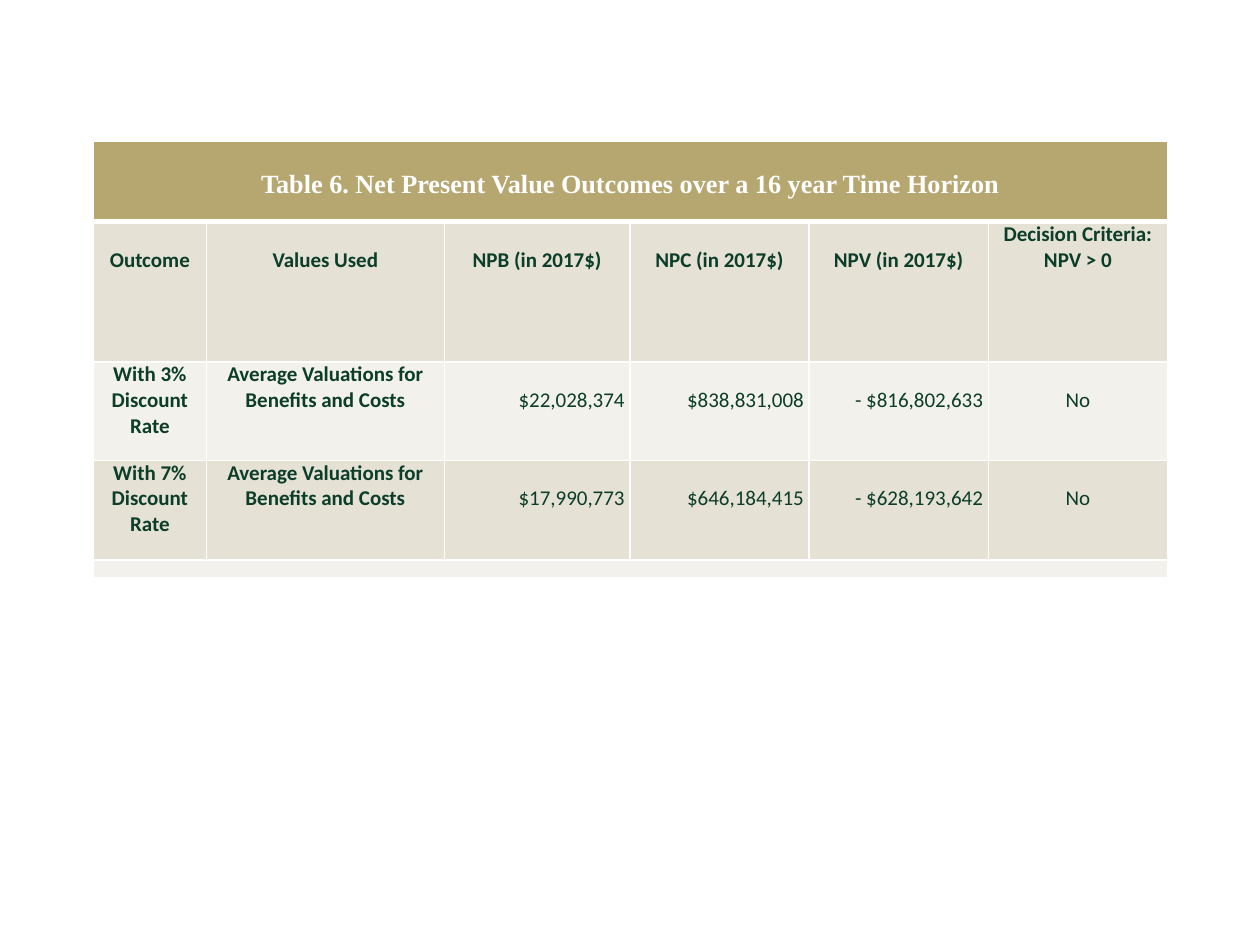
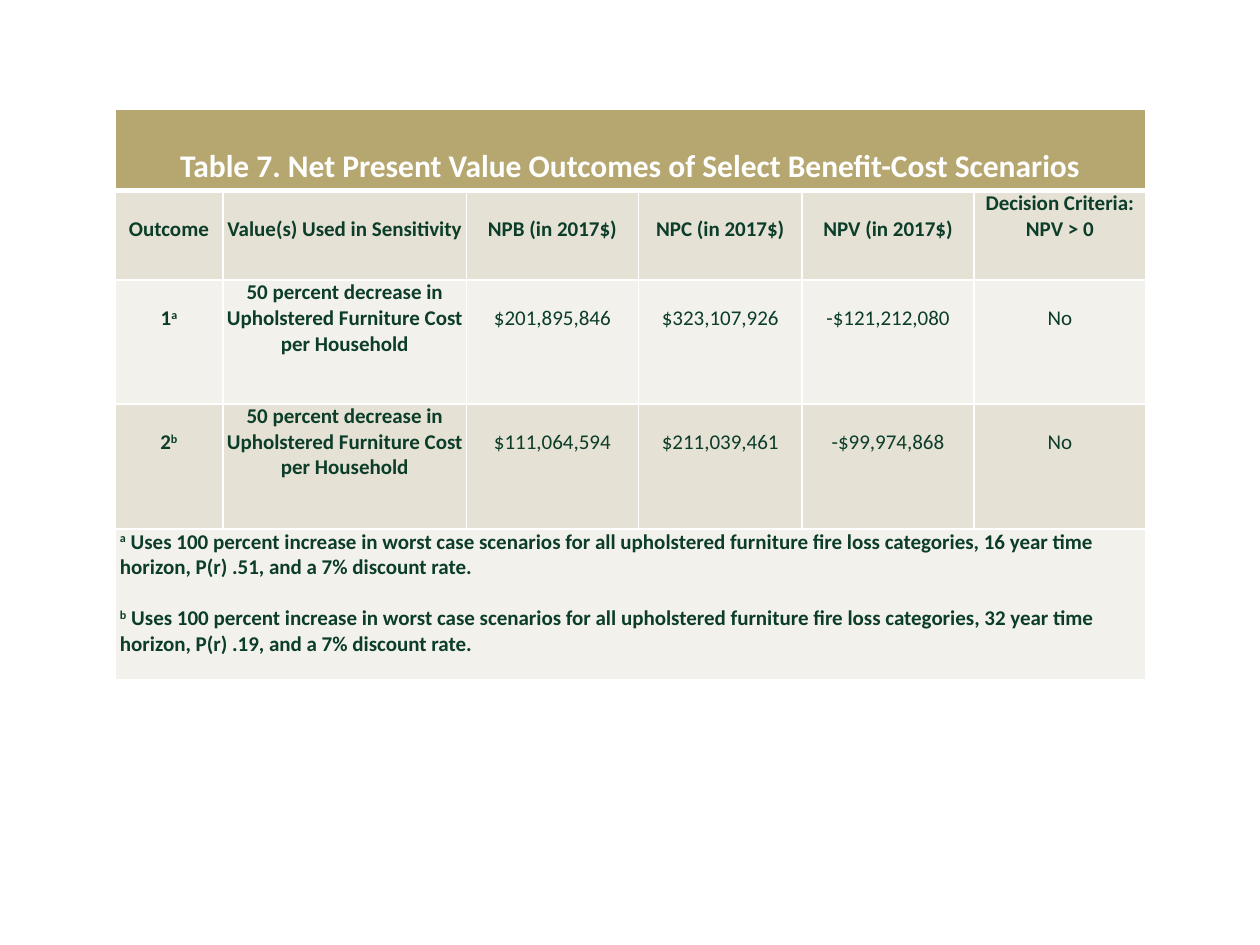
"""Build two slides with net present value tables."""
from lxml import etree
from pptx import Presentation
from pptx.dml.color import RGBColor
from pptx.enum.text import PP_ALIGN
from pptx.oxml.ns import qn
from pptx.util import Pt

LEFT, MID, RIGHT = PP_ALIGN.LEFT, PP_ALIGN.CENTER, PP_ALIGN.RIGHT
GOLD = RGBColor(0xB6, 0xA7, 0x71)
SAND = RGBColor(0xE5, 0xE1, 0xD5)
PALE = RGBColor(0xF3, 0xF1, 0xEB)
GREEN = RGBColor(0x0B, 0x3D, 0x29)
WHITE = RGBColor(0xFF, 0xFF, 0xFF)
BANDS = [GOLD, SAND, PALE, SAND, PALE]
SANS, SERIF = "Calibri", "Times New Roman"
MONEY = ["NPB (in 2017$)", "NPC (in 2017$)", "NPV (in 2017$)", "Decision Criteria: NPV > 0"]
MEAN = "Average Valuations for Benefits and Costs"
HALF = "50 percent decrease in Upholstered Furniture Cost per Household"
NOTE = ("^{}^ Uses 100 percent increase in worst case scenarios for all upholstered furniture "
        "fire loss categories, {} year time horizon, P(r) {}, and a 7% discount rate.")

TABLES = [
    dict(
        title="Table 6. Net Present Value Outcomes over a 16 year Time Horizon",
        face=SERIF, size=15, left=53.4, top=80.6, inset=3, align=RIGHT,
        cols=[64.5, 136.1, 106, 102.4, 102.4, 102.4],
        rows=[46, 80.3, 56.2, 57, 9.7],
        body=[
            ["Outcome", "Values Used", *MONEY],
            ["With 3% Discount Rate", MEAN, "$22,028,374", "$838,831,008", "- $816,802,633", "No"],
            ["With 7% Discount Rate", MEAN, "$17,990,773", "$646,184,415", "- $628,193,642", "No"],
        ],
        notes=[],
    ),
    dict(
        title="Table 7. Net Present Value Outcomes of Select Benefit-Cost Scenarios",
        face=SANS, size=18, left=65.6, top=62.2, inset=1.5, align=MID,
        cols=[61.9, 139.1, 98.2, 93.6, 98.2, 98.2],
        rows=[46.8, 51, 70.8, 71.6, 86],
        body=[
            ["Outcome", "Value(s) Used in Sensitivity", *MONEY],
            ["1^a", HALF, "$201,895,846", "$323,107,926", "-$121,212,080", "No"],
            ["2^b", HALF, "$111,064,594", "$211,039,461", "-$99,974,868", "No"],
        ],
        notes=[NOTE.format("a", 16, ".51"), NOTE.format("b", 32, ".19")],
    ),
]


def dress(cell, band, inset, row):
    """Set borders, fill and margins of a cell."""
    props = cell._tc.get_or_add_tcPr()
    for side in "LRTB":
        thick = (row, side) in ((0, "B"), (1, "T"))
        line = etree.SubElement(props, qn("a:ln" + side), w=str(Pt(3 if thick else 1)))
        fill = etree.SubElement(line, qn("a:solidFill"))
        etree.SubElement(fill, qn("a:srgbClr"), val=str(WHITE))
    cell.fill.solid()
    cell.fill.fore_color.rgb = band
    cell.margin_left = cell.margin_right = Pt(inset)
    cell.margin_top = cell.margin_bottom = 0


def write(para, text, align, size=12, face=SANS, color=GREEN, bold=True, space=1):
    """Write text whose parts between carets are raised."""
    para.alignment = align
    para.line_spacing = space
    for n, part in enumerate(text.split("^")):
        if part:
            run = para.add_run()
            run.text = part
            font = run.font
            font.name, font.size, font.bold = face, Pt(size), bold
            font.color.rgb = color
            if n % 2:
                run._r.get_or_add_rPr().set("baseline", "30000")


prs = Presentation()
prs.slide_width, prs.slide_height = Pt(720), Pt(540)

for spec_of in TABLES:
    cols, rows, inset = spec_of["cols"], spec_of["rows"], spec_of["inset"]
    slide = prs.slides.add_slide(prs.slide_layouts[6])
    table = slide.shapes.add_table(
        len(rows), len(cols), Pt(spec_of["left"]), Pt(spec_of["top"]),
        Pt(sum(cols)), Pt(sum(rows))).table
    table.horz_banding = False
    for col, width in zip(table.columns, cols):
        col.width = Pt(width)
    for r, high in enumerate(rows):
        table.rows[r].height = Pt(high)
        for c in range(len(cols)):
            dress(table.cell(r, c), BANDS[r], inset if 0 < r < 4 else 3, r)

    head, foot = table.cell(0, 0), table.cell(4, 0)
    head.merge(table.cell(0, 5))
    foot.merge(table.cell(4, 5))
    write(head.text_frame.paragraphs[0], spec_of["title"], MID,
          spec_of["size"], spec_of["face"], WHITE, space=2)

    for r, line in enumerate(spec_of["body"]):
        for c, text in enumerate(line):
            label = r == 0 or c < 2
            wraps = c == 5 if r == 0 else c < 2 and len(text) > 3
            align = spec_of["align"] if r and 2 <= c < 5 else MID
            write(table.cell(r + 1, c).text_frame.paragraphs[0], text, align,
                  bold=label, space=1 if wraps else 2)

    frame = foot.text_frame
    for n, note in enumerate(spec_of["notes"]):
        para = frame.add_paragraph() if n else frame.paragraphs[0]
        write(para, note, LEFT)
        if n:
            para.space_before = Pt(14.6)
    if not spec_of["notes"]:
        for c in range(len(cols)):
            para = table.cell(4, c).text_frame.paragraphs[0]
            etree.SubElement(para._p, qn("a:endParaRPr"), sz="800")

prs.save("out.pptx")
